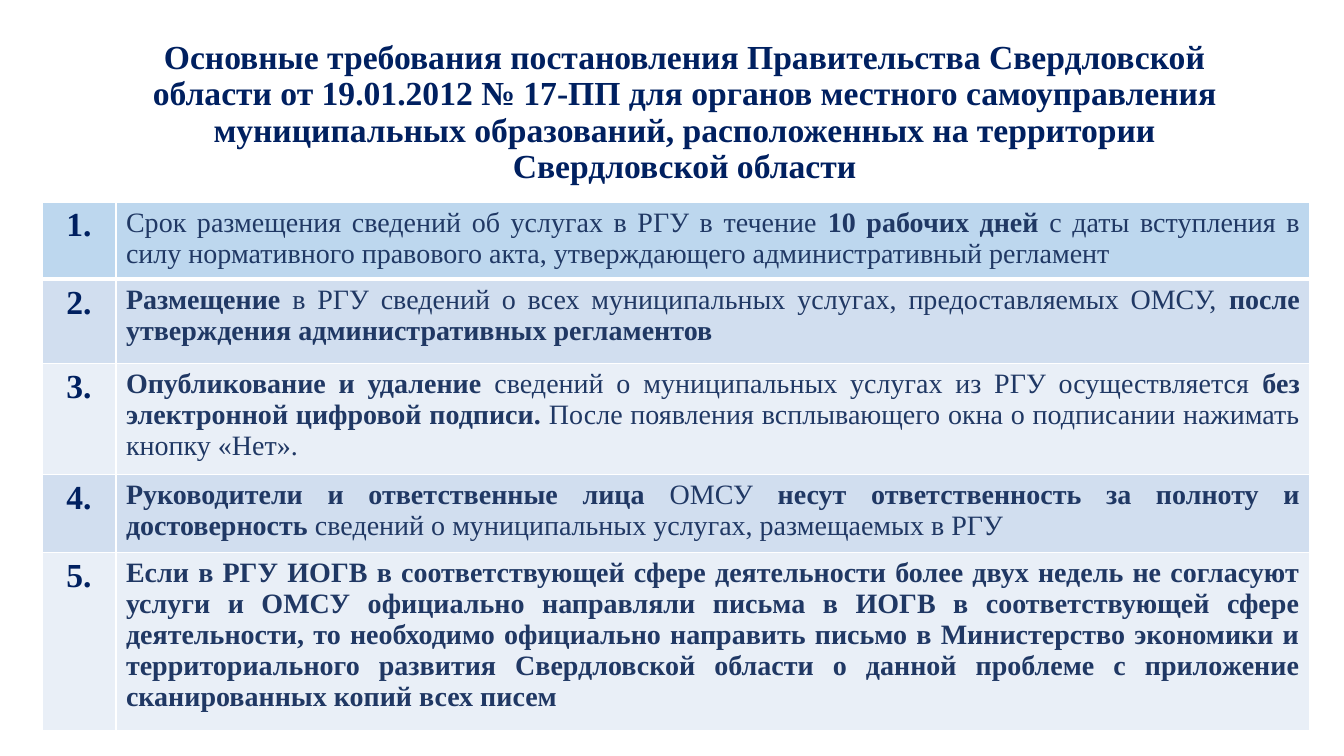
from lxml.etree import SubElement
from pptx import Presentation
from pptx.dml.color import RGBColor
from pptx.enum.text import MSO_ANCHOR, PP_ALIGN
from pptx.oxml.ns import qn
from pptx.util import Pt

THEME = {
    "font": "Times New Roman",
    "heading": "002060",
    "body": "203864",
    "border": "FFFFFF",
    "first_row": "BDD7EE",
    "bands": ["D1DEEF", "E9EFF7"],
    "heading_size": 24,
    "body_size": 20,
    "thin": 0.96,
    "thick": 3,
}
TITLE = (
    "Основные требования постановления Правительства Свердловской области "
    "от 19.01.2012 № 17-ПП для органов местного самоуправления муниципальных "
    "образований, расположенных на территории Свердловской области"
)
# Row height in px and wording; ** switches bold on and off.
REQUIREMENTS = [
    (77, "Срок размещения сведений об услугах в РГУ в течение** 10 рабочих дней **"
         "с даты вступления в силу нормативного правового акта, утверждающего "
         "административный регламент"),
    (84, "**Размещение** в РГУ сведений о всех муниципальных услугах, "
         "предоставляемых ОМСУ, **после утверждения административных регламентов**"),
    (111, "**Опубликование и удаление **сведений о муниципальных услугах из РГУ "
          "осуществляется **без электронной цифровой подписи.** После появления "
          "всплывающего окна о подписании нажимать кнопку «Нет»."),
    (78, "**Руководители и ответственные лица** ОМСУ **несут ответственность "
         "за полноту и достоверность **сведений о муниципальных услугах, "
         "размещаемых в РГУ"),
    (178, "**Если в РГУ ИОГВ в соответствующей сфере деятельности более двух недель "
          "не согласуют услуги и ОМСУ официально направляли письма в ИОГВ "
          "в соответствующей сфере деятельности, то необходимо официально направить "
          "письмо в Министерство экономики и территориального развития Свердловской "
          "области о данной проблеме с приложение сканированных копий всех писем**"),
]
COLUMNS = [74, 1194]


def px(n):
    return round(n * 914400 / 100.8)


def write(p, text, style, align):
    """Fill a paragraph, making the parts between ** marks bold."""
    p.alignment = align
    p.font.name = THEME["font"]
    p.font.size = Pt(THEME[style + "_size"])
    p.font.color.rgb = RGBColor.from_string(THEME[style])
    for i, part in enumerate(text.split("**")):
        if part:
            r = p.add_run()
            r.text = part
            r.font.bold = i % 2 == 1


prs = Presentation()
prs.slide_width, prs.slide_height = px(1344), px(756)
slide = prs.slides.add_slide(prs.slide_layouts[6])

title = slide.shapes.add_textbox(px(105), px(40), px(1159), px(146))
tf = title.text_frame
tf.word_wrap = True
tf.vertical_anchor = MSO_ANCHOR.MIDDLE
write(tf.paragraphs[0], f"**{TITLE}**", "heading", PP_ALIGN.CENTER)
tf.paragraphs[0].line_spacing = 0.9

table_height = sum(height for height, _ in REQUIREMENTS)
table = slide.shapes.add_table(
    len(REQUIREMENTS), len(COLUMNS), px(42), px(202), px(sum(COLUMNS)), px(table_height)
).table
for column, width in zip(table.columns, COLUMNS):
    column.width = px(width)

for i, (height, text) in enumerate(REQUIREMENTS):
    table.rows[i].height = px(height)
    number, requirement = table.rows[i].cells
    write(number.text_frame.paragraphs[0], f"**{i + 1}.**", "heading", PP_ALIGN.CENTER)
    write(requirement.text_frame.paragraphs[0], text, "body", PP_ALIGN.JUSTIFY)

    fill = THEME["bands"][(i - 1) % 2] if i else THEME["first_row"]
    thick_side = {0: "lnB", 1: "lnT"}.get(i)
    for cell in (number, requirement):
        tc_pr = cell._tc.get_or_add_tcPr()
        for side in ("lnL", "lnR", "lnT", "lnB"):
            weight = THEME["thick" if side == thick_side else "thin"]
            line = SubElement(tc_pr, qn("a:" + side), w=str(Pt(weight)))
            paint = SubElement(line, qn("a:solidFill"))
            SubElement(paint, qn("a:srgbClr"), val=THEME["border"])
        cell.fill.solid()
        cell.fill.fore_color.rgb = RGBColor.from_string(fill)

prs.save("out.pptx")
